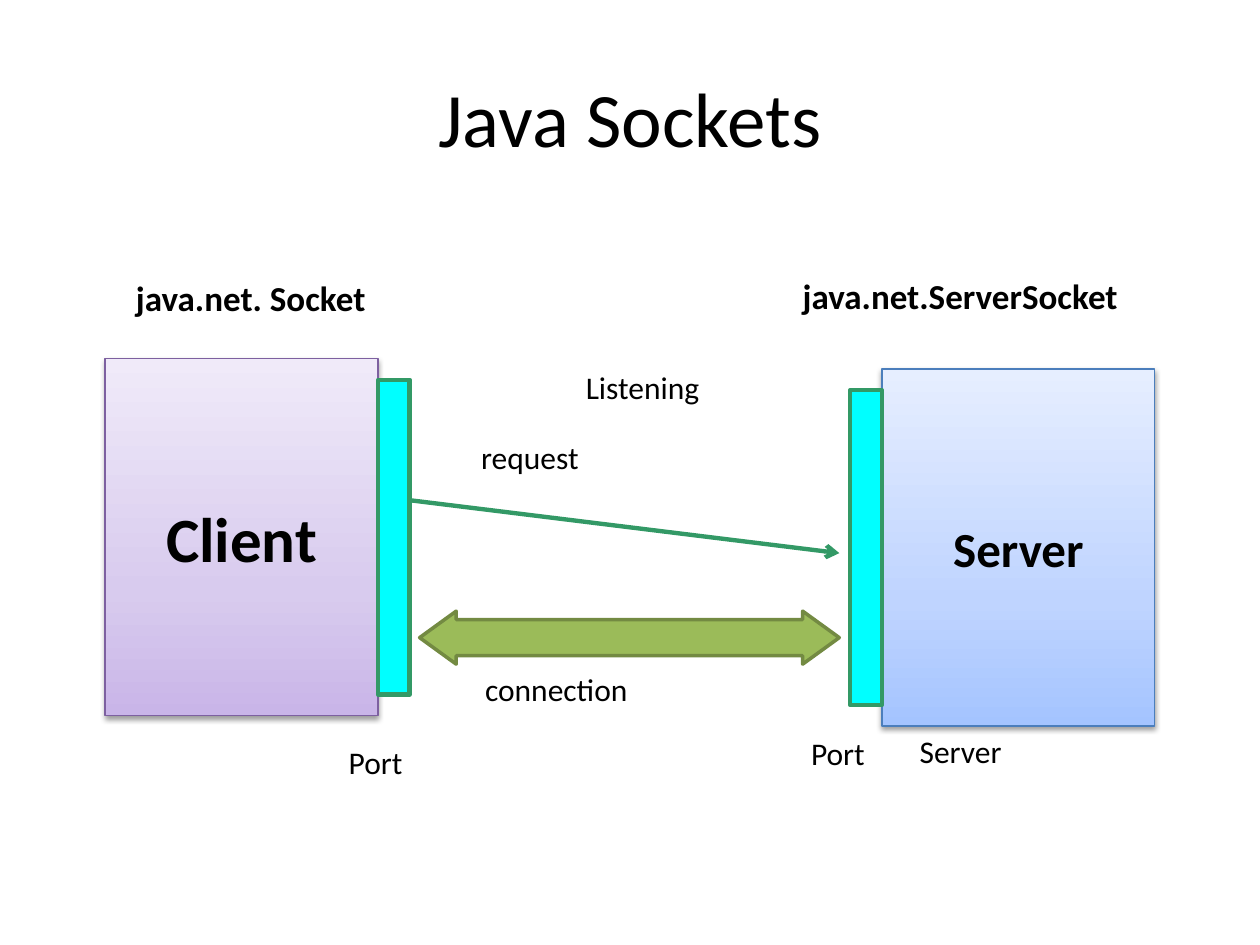
"""Build a slide on how a client and a server talk through Java sockets."""
from lxml import etree
from pptx import Presentation
from pptx.dml.color import RGBColor
from pptx.enum.shapes import MSO_CONNECTOR, MSO_SHAPE
from pptx.enum.text import MSO_ANCHOR, PP_ALIGN
from pptx.oxml import parse_xml
from pptx.oxml.ns import qn
from pptx.util import Cm, Pt

RECT, ARROW = MSO_SHAPE.RECTANGLE, MSO_SHAPE.LEFT_RIGHT_ARROW
LINE = MSO_CONNECTOR.STRAIGHT
MID, TOP = MSO_ANCHOR.MIDDLE, MSO_ANCHOR.TOP
MAIN = "http://schemas.openxmlformats.org/drawingml/2006/main"

FONT, BLACK, GREEN, CYAN = "Calibri", "000000", "339966", "00FFFF"
TITLE = ("Java Sockets", 1.27, 0.76, 22.86, 3.18)
HEADS = [
    ("java.net.ServerSocket", 15.93, 5.41, 6.93, 1.12),
    ("java.net. Socket", 2.49, 5.44, 5.18, 1.12),
]
LABELS = [
    ("Server", 18.29, 14.63, 4.27, 1.6),
    ("Listening", 11.56, 7.29, 5.59, 1.6),
    ("request", 9.45, 8.71, 4.8, 1.6),
    ("connection", 9.53, 13.39, 6.63, 1.6),
    ("Port", 16.1, 14.68, 2.79, 1.6),
    ("Port", 6.78, 14.86, 1.96, 1.02),
]
HOSTS = [
    ("Client", 36, 2.12, 7.23, "7D60A0", ("C9B5E8", "D8CBEE", "F0EAF9")),
    ("Server", 28, 17.78, 7.44, "4B7EBC", ("A4C4FF", "BFD4FF", "E6EEFF")),
]
HOST_W, HOST_H = 5.5, 7.2
PORT_W, PORT_H = 0.64, 6.35
PORTS = [HOSTS[0][2] + HOST_W, HOSTS[1][2] - PORT_W]
STOPS = (0, 35, 100)
SHADE = (f'<a:effectLst xmlns:a="{MAIN}"><a:outerShdw blurRad="39400" '
         'dist="20300" dir="5400000" rotWithShape="0"><a:srgbClr val="000000">'
         '<a:alpha val="38000"/></a:srgbClr></a:outerShdw></a:effectLst>')


def hue(code):
    return RGBColor.from_string(code)


def write(shape, text, size, bold=False, mid=False, wrap=True):
    frame = shape.text_frame
    frame.word_wrap = wrap
    frame.vertical_anchor = MID if mid else TOP
    para = frame.paragraphs[0]
    para.alignment = PP_ALIGN.CENTER if mid else PP_ALIGN.LEFT
    run = para.add_run()
    run.text = text
    font = run.font
    font.name, font.size, font.bold = FONT, Pt(size), bold
    font.color.rgb = hue(BLACK)


def label(slide, item, size, **style):
    text, *box = item
    write(slide.shapes.add_textbox(*map(Cm, box)), text, size, **style)


def block(slide, kind, box, edge, width, fill=None):
    shape = slide.shapes.add_shape(kind, *map(Cm, box))
    shape.shadow.inherit = False
    shape.line.color.rgb = hue(edge)
    shape.line.width = Pt(width)
    if fill:
        shape.fill.solid()
        shape.fill.fore_color.rgb = hue(fill)
    return shape


def host(slide, text, size, left, top, edge, shades):
    shape = block(slide, RECT, (left, top, HOST_W, HOST_H), edge, 0.75)
    shape.fill.gradient()
    shape.fill.gradient_angle = 90
    props = shape._element.spPr
    stops = props.find(".//" + qn("a:gsLst"))
    stops.clear()
    for pos, shade in zip(STOPS, shades):
        stop = etree.SubElement(stops, qn("a:gs"), pos=str(pos * 1000))
        etree.SubElement(stop, qn("a:srgbClr"), val=shade)
    props.replace(props.find(qn("a:effectLst")), parse_xml(SHADE))
    write(shape, text, size, bold=True, mid=True, wrap=False)


def request(slide):
    ends = map(Cm, (8.23, 10.08, 16.92, 11.15))
    link = slide.shapes.add_connector(LINE, *ends)
    link.line.color.rgb = hue(GREEN)
    link.line.width = Pt(2.5)
    etree.SubElement(link.line._get_or_add_ln(), qn("a:tailEnd"), type="arrow")
    etree.SubElement(link._element.spPr, qn("a:effectLst"))


def main():
    deck = Presentation()
    deck.slide_width, deck.slide_height = Cm(25.4), Cm(19.05)
    slide = deck.slides.add_slide(deck.slide_layouts[6])
    label(slide, TITLE, 44, mid=True)
    for item in HEADS:
        label(slide, item, 20, bold=True, wrap=False)
    for item in HOSTS:
        host(slide, *item)
    request(slide)
    arrow = block(slide, ARROW, (8.46, 12.32, 8.46, 1.07), "738A42", 2, "9BBB59")
    arrow.adjustments[0], arrow.adjustments[1] = 0.68, 0.69
    for item, left in zip(HOSTS, PORTS):
        top = item[3] + (HOST_H - PORT_H) / 2
        block(slide, RECT, (left, top, PORT_W, PORT_H), GREEN, 2.5, CYAN)
    for item in LABELS:
        label(slide, item, 18)
    deck.save("out.pptx")


if __name__ == "__main__":
    main()
